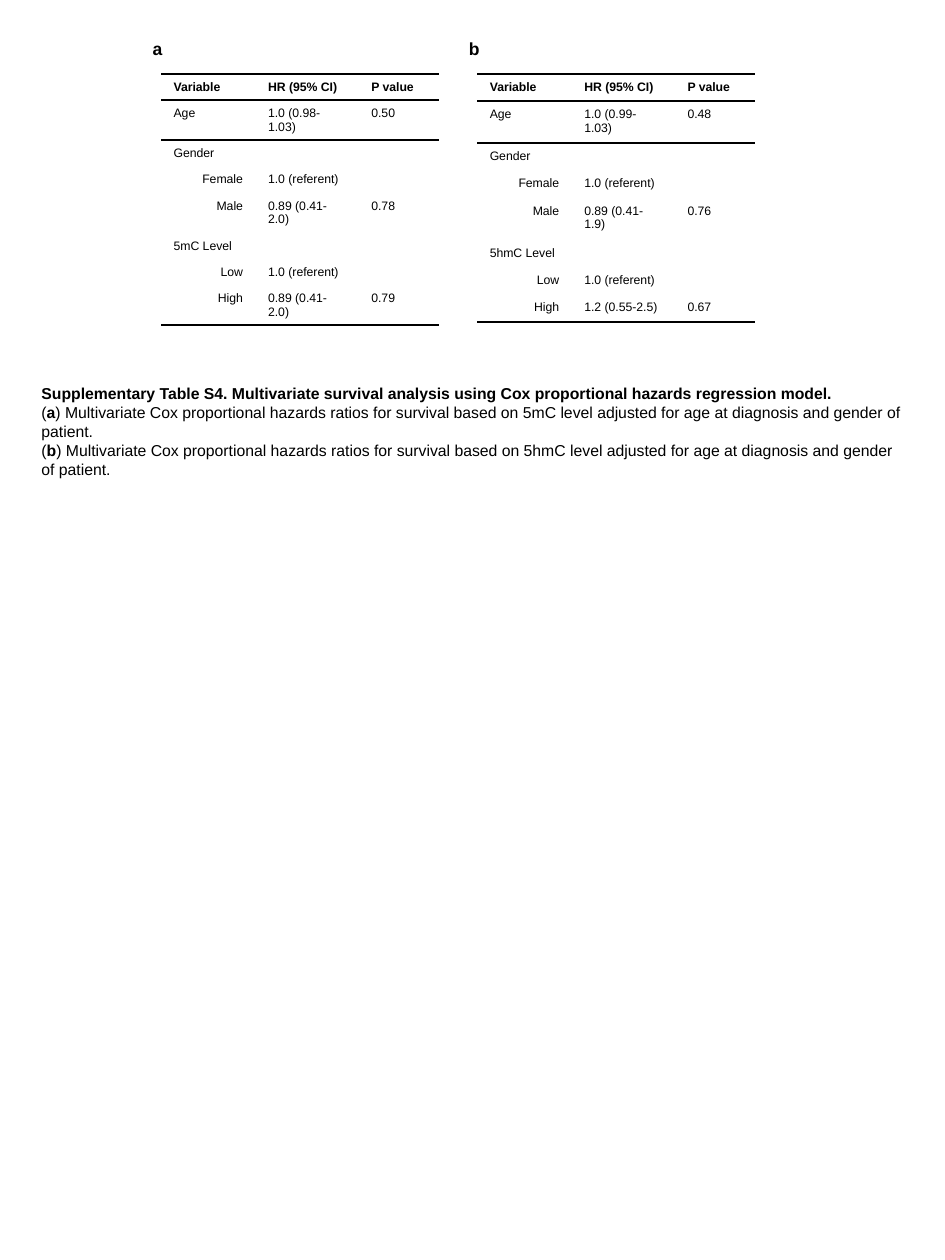
"""Build the supplementary table slide of Cox regression results."""
import dataclasses

import lxml.etree
import pptx
import pptx.dml.color
import pptx.enum.text
import pptx.oxml.ns
import pptx.util

Pt = pptx.util.Pt
Align = pptx.enum.text.PP_ALIGN
qn = pptx.oxml.ns.qn


@dataclasses.dataclass(frozen=True)
class Theme:
    font: str = "Arial"
    ink: str = "000000"
    table_size: float = 7
    caption_size: float = 9
    label_size: float = 10
    rule_width: float = 1
    plain_table: str = "{2D5ABB26-0587-4C30-8999-92F81FD0307C}"


THEME = Theme()
COLUMNS = (54, 59, 46)
ROW_HEIGHT = 13.7
TABLE_TOP = 42.2
HEADER = ("Variable", "HR (95% CI)", "P value")
INDENTED = ("Female", "Male", "Low", "High")
PANELS = (
    ("a", 92, "5mC", ("1.0 (0.98-1.03)", "0.50"),
     ("0.89 (0.41-2.0)", "0.78"), ("0.89 (0.41-2.0)", "0.79")),
    ("b", 272.7, "5hmC", ("1.0 (0.99-1.03)", "0.48"),
     ("0.89 (0.41-1.9)", "0.76"), ("1.2 (0.55-2.5)", "0.67")),
)
CAPTION_TITLE = ("Supplementary Table S4. Multivariate survival analysis "
                 "using Cox proportional hazards regression model.")


def style_paragraph(para, size, bold=None, align=Align.LEFT):
    para.alignment = align
    para.font.name = THEME.font
    para.font.size = Pt(size)
    para.font.bold = bold
    para.font.color.rgb = pptx.dml.color.RGBColor.from_string(THEME.ink)


def add_text_box(page, left, top, width, height):
    box = page.shapes.add_textbox(Pt(left), Pt(top), Pt(width), Pt(height))
    box.text_frame.word_wrap = True
    return box.text_frame


def add_label(page, letter, left):
    para = add_text_box(page, left, 18, 18, 19.4).paragraphs[0]
    para.text = letter
    style_paragraph(para, THEME.label_size, True, Align.CENTER)


def add_rules(cell, sides):
    properties = cell._tc.get_or_add_tcPr()
    for position, side in enumerate(sides):
        line = lxml.etree.Element(qn(f"a:ln{side}"), w=str(Pt(THEME.rule_width)))
        fill = lxml.etree.SubElement(line, qn("a:solidFill"))
        lxml.etree.SubElement(fill, qn("a:srgbClr"), val=THEME.ink)
        properties.insert(position, line)


def fill_cell(cell, text, bold, sides):
    cell.fill.background()
    add_rules(cell, sides)
    para = cell.text_frame.paragraphs[0]
    para.text = text
    align = Align.RIGHT if text in INDENTED else Align.LEFT
    style_paragraph(para, THEME.table_size, bold, align)
    if not text:
        lxml.etree.SubElement(para._p, qn("a:endParaRPr"),
                              sz=str(int(THEME.table_size * 100)))


def add_survival_table(page, left, rows):
    frame = page.shapes.add_table(
        len(rows), len(COLUMNS), Pt(left), Pt(TABLE_TOP),
        Pt(sum(COLUMNS)), Pt(ROW_HEIGHT * len(rows)))
    table = frame.table
    table.horz_banding = False
    table._tbl.tblPr.find(qn("a:tableStyleId")).text = THEME.plain_table
    for column, width in zip(table.columns, COLUMNS):
        column.width = Pt(width)
    rules = {0: "TB", 1: "T", len(rows) - 1: "B"}
    for index, values in enumerate(rows):
        table.rows[index].height = Pt(ROW_HEIGHT)
        for cell, text in zip(table.rows[index].cells, values):
            fill_cell(cell, text, index == 0, rules.get(index, ""))


def add_panel(page, letter, left, marker, age, male, high):
    referent = ("1.0 (referent)", "")
    rows = (HEADER, ("Age", *age), ("Gender", "", ""), ("Female", *referent),
            ("Male", *male), (f"{marker} Level", "", ""), ("Low", *referent),
            ("High", *high))
    add_survival_table(page, left, rows)
    add_label(page, letter, left - 11.8)


def add_caption(page):
    frame = add_text_box(page, 16.6, 216, 507, 72.7)
    title = frame.paragraphs[0]
    title.text = CAPTION_TITLE
    style_paragraph(title, THEME.caption_size, True)
    for letter, _, marker, *_ in PANELS:
        para = frame.add_paragraph()
        style_paragraph(para, THEME.caption_size)
        sentence = (f") Multivariate Cox proportional hazards ratios for survival "
                    f"based on {marker} level adjusted for age at diagnosis and "
                    f"gender of patient.")
        for text in ("(", letter, sentence):
            span = para.add_run()
            span.text = text
            span.font.bold = text == letter


def main():
    deck = pptx.Presentation()
    deck.slide_width, deck.slide_height = Pt(540), Pt(720)
    page = deck.slides.add_slide(deck.slide_layouts[6])
    for panel in PANELS:
        add_panel(page, *panel)
    add_caption(page)
    deck.save("out.pptx")


if __name__ == "__main__":
    main()
